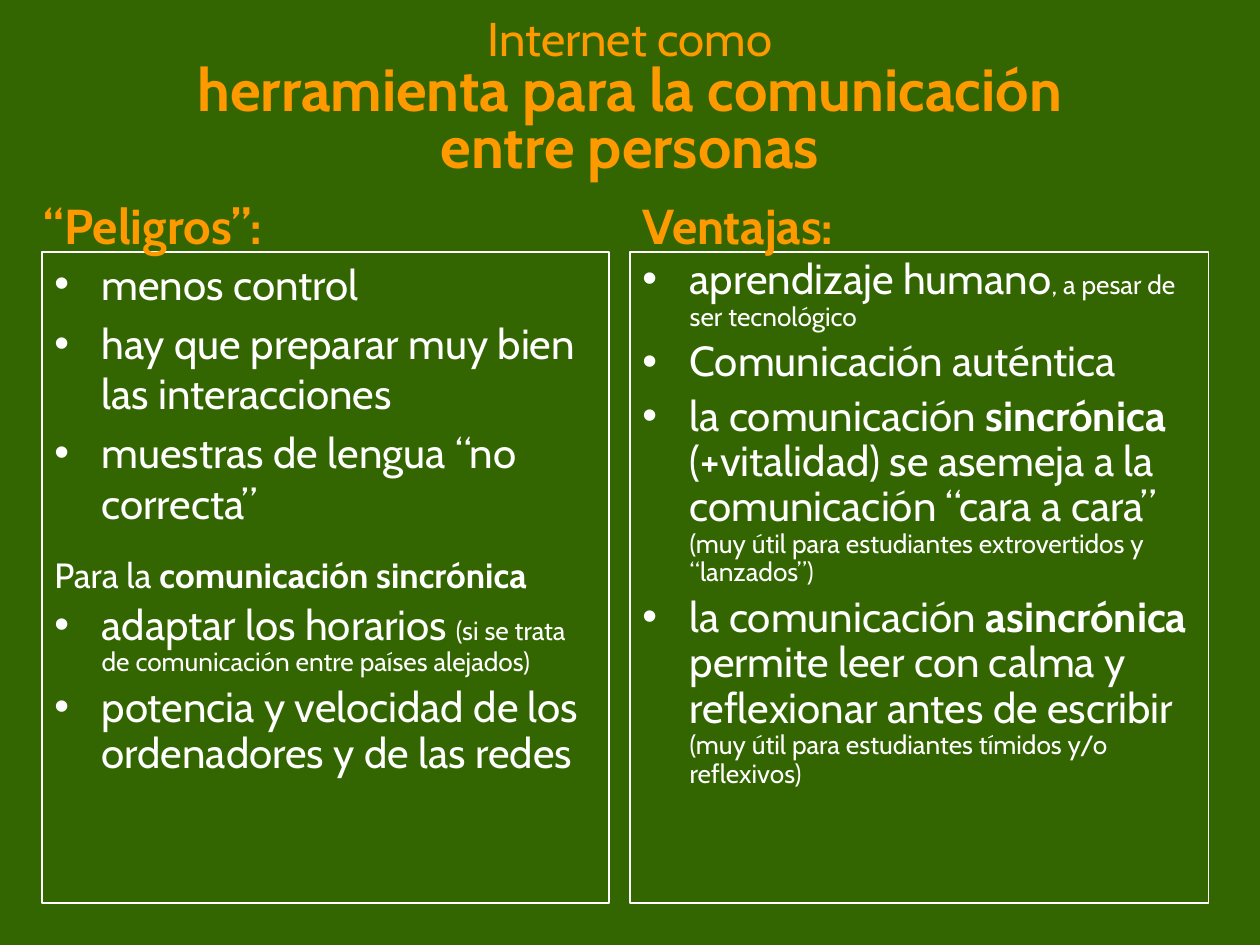
from dataclasses import dataclass
from typing import Optional

from lxml.etree import SubElement
from pptx import Presentation
from pptx.dml.color import RGBColor as RGB
from pptx.enum.shapes import MSO_SHAPE as Shape
from pptx.enum.text import MSO_ANCHOR as Anchor, PP_ALIGN as Align
from pptx.oxml.ns import qn
from pptx.util import Pt

COLORS = {"bg": "336600", "text": "FFFFFF", "accent": "FF9900"}
FONT = "Cabin"
INDENT = 27


@dataclass
class Run:
    text: str
    size: float = 24
    bold: bool = False
    color: str = "text"


@dataclass
class Para:
    runs: list[Run]
    bullet: bool = True
    spacing: Optional[float] = 0.9
    before: float = 5
    indent: float = INDENT
    align: Align = Align.LEFT


@dataclass
class Block:
    left: float
    top: float
    width: float
    height: float
    paras: list[Para]
    framed: bool = False
    anchor: Anchor = Anchor.TOP


def heading(text: str) -> list[Para]:
    return [Para([Run(text, 28, True, "accent")], bullet=False, spacing=None)]


def add_run(p, run: Run) -> None:
    for i, line in enumerate(run.text.split("\n")):
        if i:
            p.add_line_break()
        if not line:
            continue
        r = p.add_run()
        r.text = line
        r.font.name = FONT
        r.font.size = Pt(run.size)
        r.font.bold = run.bold
        r.font.color.rgb = RGB.from_string(COLORS[run.color])


def add_para(p, para: Para) -> None:
    p.alignment = para.align
    p.space_before = Pt(para.before)
    if para.spacing:
        p.line_spacing = para.spacing
    ppr = p._p.get_or_add_pPr()
    ppr.set("marL", str(Pt(para.indent)))
    ppr.set("indent", str(Pt(-para.indent)))
    if para.bullet:
        SubElement(ppr, qn("a:buFont"), typeface="Arial")
        SubElement(ppr, qn("a:buChar"), char="•")
    else:
        SubElement(ppr, qn("a:buNone"))
    for run in para.runs:
        add_run(p, run)


def add_block(s, block: Block) -> None:
    box = [Pt(v) for v in (block.left, block.top, block.width, block.height)]
    if block.framed:
        sp = s.shapes.add_shape(Shape.RECTANGLE, *box)
        sp.shadow.inherit = False
        sp.fill.background()
        sp.line.color.rgb = RGB.from_string(COLORS["text"])
        sp.line.width = Pt(0.75)
    else:
        sp = s.shapes.add_textbox(*box)
    tf = sp.text_frame
    tf.word_wrap = True
    tf.vertical_anchor = block.anchor
    for i, para in enumerate(block.paras):
        add_para(tf.add_paragraph() if i else tf.paragraphs[0], para)


ADVANTAGES = [
    Para([Run("aprendizaje humano"), Run(", a pesar de ser tecnológico", 15)]),
    Para([Run("Comunicación auténtica")]),
    Para([
        Run("la comunicación"),
        Run(" sincrónica", bold=True),
        Run(" (+vitalidad) se asemeja a la comunicación “cara a cara” "),
        Run("(muy útil para estudiantes extrovertidos y “lanzados”)", 15),
    ]),
    Para([
        Run("la comunicación"),
        Run(" asincrónica", bold=True),
        Run(" permite leer con calma y reflexionar antes de escribir "),
        Run("(muy útil para estudiantes tímidos y/o reflexivos)", 15),
    ]),
]

DANGERS = [
    Para([Run("menos control")], spacing=None),
    Para([Run("hay que preparar muy bien las interacciones")], spacing=None),
    Para([Run("muestras de lengua “no correcta”")], spacing=None),
    Para([Run("Para la ", 20), Run("comunicación sincrónica", 20, True)],
         bullet=False, spacing=1.4),
    Para([
        Run("adaptar los horarios"),
        Run(" ", 22),
        Run("(si se trata de comunicación entre países alejados)", 15),
    ]),
    Para([Run("potencia y velocidad de los ordenadores y de las redes")]),
]

TITLE = [Para(
    [
        Run("Internet como\n", 27, color="accent"),
        Run("herramienta para la comunicación\nentre personas", 34, True, "accent"),
    ],
    bullet=False, spacing=0.8, before=0, indent=0, align=Align.CENTER,
)]

BLOCKS = [
    Block(360, 144, 330.5, 372, ADVANTAGES, framed=True),
    Block(24, 144, 324, 372, DANGERS, framed=True),
    Block(360, 108, 162, 30, heading("Ventajas:")),
    Block(18, 108, 230, 36, heading("“Peligros”:")),
    Block(54, 12, 612, 90, TITLE, anchor=Anchor.MIDDLE),
]


def main() -> None:
    prs = Presentation()
    prs.slide_width, prs.slide_height = Pt(720), Pt(540)
    s = prs.slides.add_slide(prs.slide_layouts[6])
    s.background.fill.solid()
    s.background.fill.fore_color.rgb = RGB.from_string(COLORS["bg"])
    for block in BLOCKS:
        add_block(s, block)
    prs.save("out.pptx")


if __name__ == "__main__":
    main()
